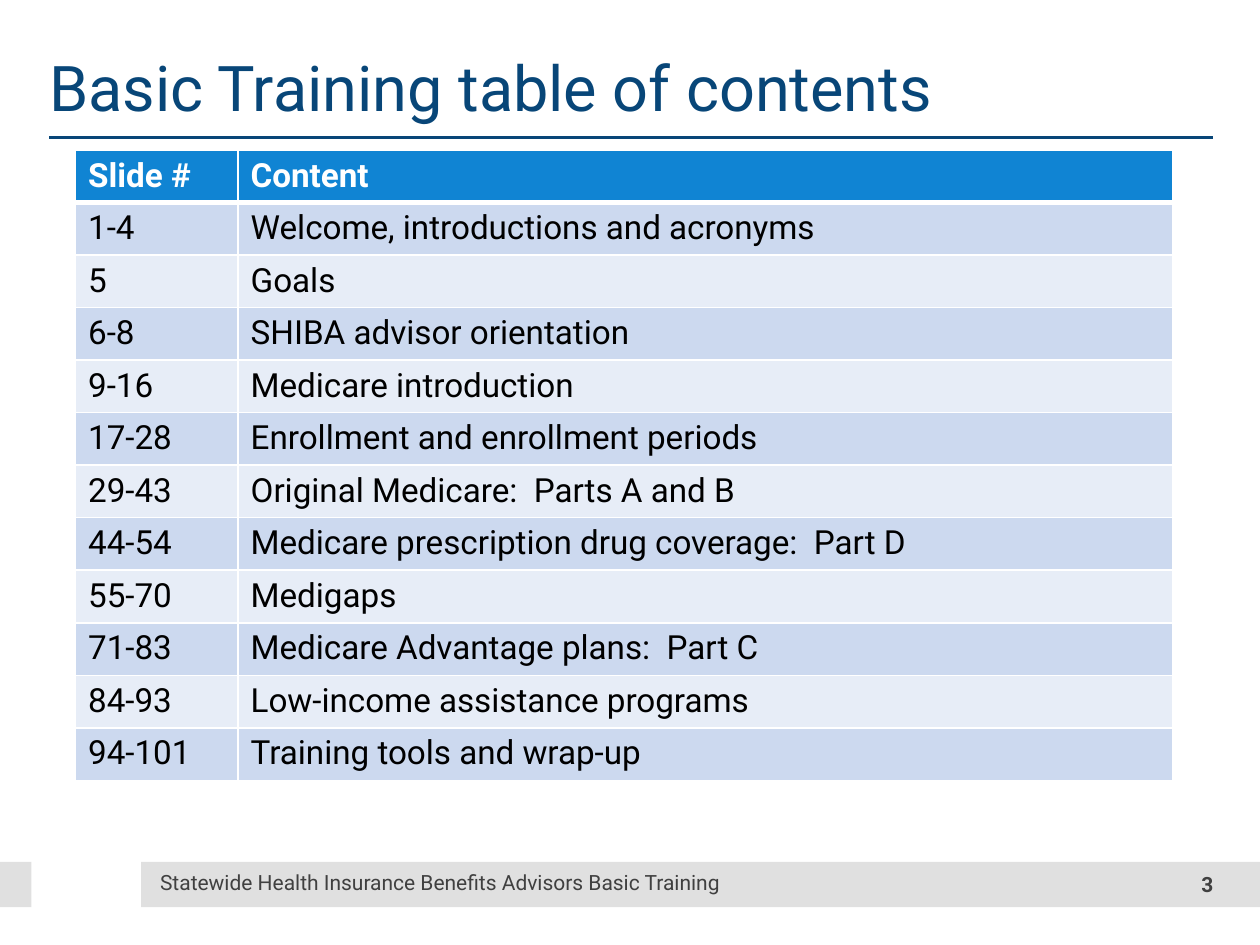
import dataclasses

import pptx
import pptx.dml.color
import pptx.enum.shapes
import pptx.enum.text
import pptx.oxml
import pptx.oxml.ns
import pptx.util
from pptx.util import Inches

ANCHOR = pptx.enum.text.MSO_ANCHOR
ALIGN = pptx.enum.text.PP_ALIGN


@dataclasses.dataclass(frozen=True)
class Theme:
    """Colours, font and type sizes of the slide."""
    font: str = "Roboto"
    navy: str = "084678"
    header: str = "1084D3"
    bands: tuple = ("CCD9EF", "E7EDF7")
    grey: str = "E0E0E0"
    footer: str = "404040"
    white: str = "FFFFFF"
    black: str = "000000"
    title_size: int = 36
    table_size: int = 19
    footer_size: int = 12


T = Theme()
CONTENTS = [
    ("Slide #", "Content"),
    ("1-4", "Welcome, introductions and acronyms"),
    ("5", "Goals"),
    ("6-8", "SHIBA advisor orientation"),
    ("9-16", "Medicare introduction"),
    ("17-28", "Enrollment and enrollment periods"),
    ("29-43", "Original Medicare:  Parts A and B"),
    ("44-54", "Medicare prescription drug coverage:  Part D"),
    ("55-70", "Medigaps"),
    ("71-83", "Medicare Advantage plans:  Part C"),
    ("84-93", "Low-income assistance programs"),
    ("94-101", "Training tools and wrap-up"),
]


def rgb(value):
    """Return a colour object for a hex string."""
    return pptx.dml.color.RGBColor.from_string(value)


def add_run(p, text, size, color, bold=False):
    """Append a formatted run to a paragraph."""
    r = p.add_run()
    r.text = text
    r.font.name = T.font
    r.font.size = pptx.util.Pt(size)
    r.font.bold = bold
    r.font.color.rgb = rgb(color)


def add_text(s, box, text, size, color, bold=False, align=ALIGN.LEFT, spacing=1.0):
    """Add a one-line text box without insets, centred vertically."""
    tf = s.shapes.add_textbox(*map(Inches, box)).text_frame
    tf.word_wrap = True
    tf.vertical_anchor = ANCHOR.MIDDLE
    tf.margin_left = tf.margin_right = tf.margin_top = tf.margin_bottom = 0
    p = tf.paragraphs[0]
    p.alignment = align
    p.line_spacing = spacing
    add_run(p, text, size, color, bold)


def add_bar(s, left, width):
    """Add one grey block of the footer band."""
    sp = s.shapes.add_shape(pptx.enum.shapes.MSO_SHAPE.RECTANGLE,
                            *map(Inches, (left, 6.84, width, 0.36)))
    sp.shadow.inherit = False
    sp.fill.solid()
    sp.fill.fore_color.rgb = rgb(T.grey)
    sp.line.fill.background()


def add_rule(s, left, right, y):
    """Add the horizontal rule under the title."""
    line = s.shapes.add_connector(pptx.enum.shapes.MSO_CONNECTOR.STRAIGHT,
                                  *map(Inches, (left, y, right, y)))
    line.line.color.rgb = rgb(T.navy)
    line.line.width = pptx.util.Pt(2)
    line._element.spPr.append(pptx.oxml.parse_xml(
        f'<a:effectLst {pptx.oxml.ns.nsdecls("a")}/>'))


def set_borders(cell, top, bottom):
    """Draw white borders around a cell, with widths in points."""
    tc_pr = cell._tc.get_or_add_tcPr()
    for i, (side, width) in enumerate(zip("LRTB", (1, 1, top, bottom))):
        tc_pr.insert(i, pptx.oxml.parse_xml(
            f'<a:ln{side} {pptx.oxml.ns.nsdecls("a")} w="{pptx.util.Pt(width)}">'
            f'<a:solidFill><a:srgbClr val="{T.white}"/></a:solidFill></a:ln{side}>'))


def add_contents(s, rows, box, widths):
    """Add the contents table with a header row and banded body rows."""
    table = s.shapes.add_table(len(rows), len(widths), *map(Inches, box)).table
    for column, width in zip(table.columns, widths):
        column.width = Inches(width)
    for i, values in enumerate(rows):
        head = i == 0
        for j, text in enumerate(values):
            cell = table.cell(i, j)
            cell.fill.solid()
            cell.fill.fore_color.rgb = rgb(T.header if head else T.bands[(i - 1) % 2])
            set_borders(cell, 3 if i == 1 else 1, 3 if head else 1)
            add_run(cell.text_frame.paragraphs[0], text, T.table_size,
                    T.white if head else T.black, head)


def main():
    """Build the slide and save it."""
    prs = pptx.Presentation()
    prs.slide_width, prs.slide_height = Inches(10), Inches(7.5)
    s = prs.slides.add_slide(prs.slide_layouts[6])
    add_bar(s, 1.12, 8.88)
    add_bar(s, 0, 0.25)
    add_rule(s, 0.39, 9.63, 1.09)
    add_text(s, (0.39, 0.36, 9.24, 0.73), "Basic Training table of contents",
             T.title_size, T.navy, spacing=0.9)
    add_contents(s, CONTENTS, (0.6, 1.19, 8.71, 4.94), (1.29, 7.42))
    add_text(s, (8.93, 6.91, 0.7, 0.22), "3", T.footer_size, T.footer,
             bold=True, align=ALIGN.RIGHT)
    add_text(s, (1.27, 6.89, 6.89, 0.22),
             "Statewide Health Insurance Benefits Advisors Basic Training",
             T.footer_size, T.footer)
    prs.save("out.pptx")


if __name__ == "__main__":
    main()
